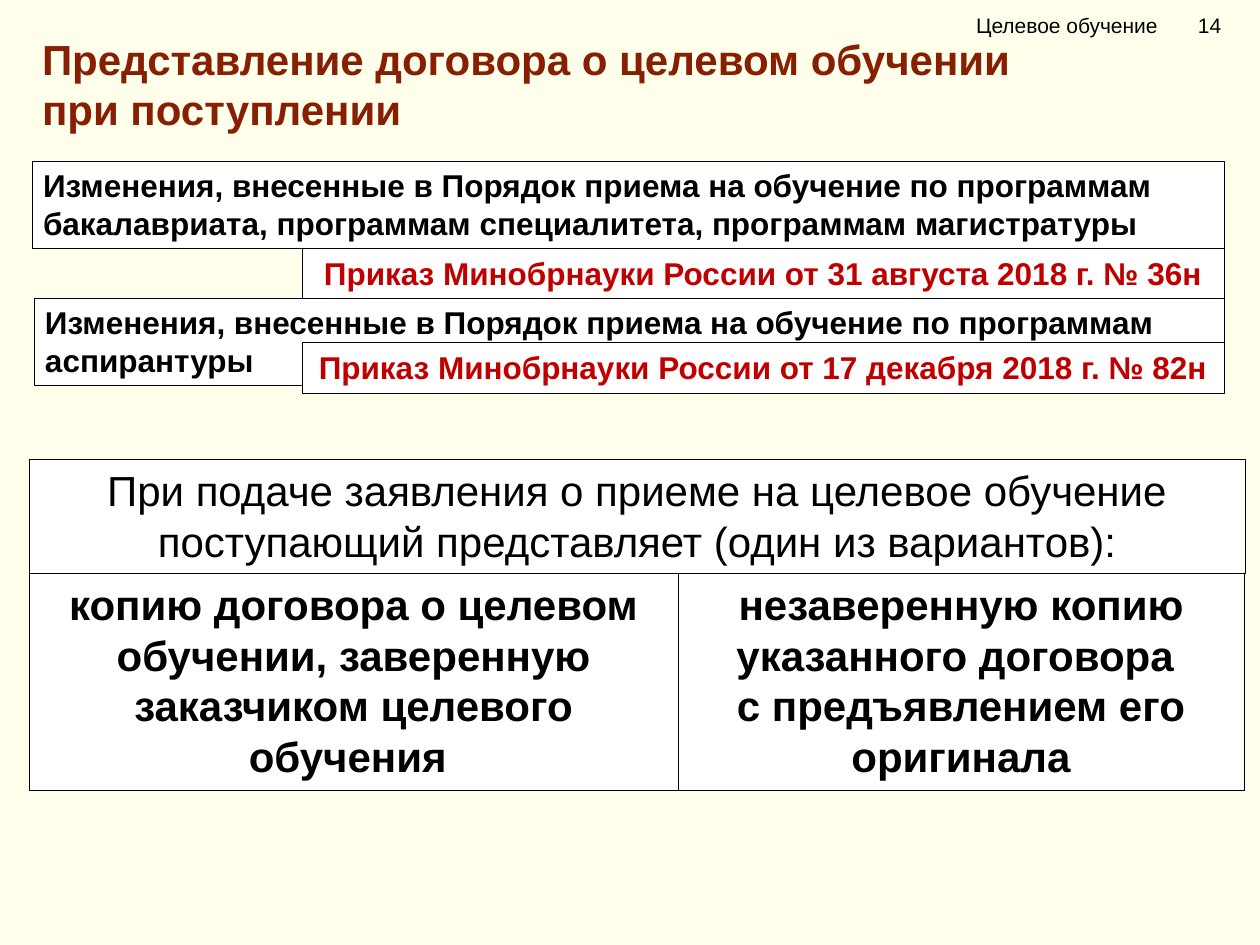
from dataclasses import dataclass

from lxml import etree
from pptx import Presentation
from pptx.dml.color import RGBColor
from pptx.enum.shapes import MSO_SHAPE
from pptx.enum.text import MSO_ANCHOR, PP_ALIGN
from pptx.oxml.ns import qn
from pptx.util import Pt

RECTANGLE = MSO_SHAPE.RECTANGLE
LEFT, CENTER = PP_ALIGN.LEFT, PP_ALIGN.CENTER
TOP, MIDDLE = MSO_ANCHOR.TOP, MSO_ANCHOR.MIDDLE


@dataclass(frozen=True)
class Theme:
    font: str = "Arial"
    background: str = "FFFFEB"
    panel: str = "FFFFFF"
    ink: str = "000000"
    title: str = "871F03"
    order: str = "C00000"
    large: int = 24
    medium: int = 18
    small: int = 12
    outline: float = 0.25


THEME = Theme()
SLIDE_SIZE = (1260, 945)

TITLE = ["Представление договора о целевом обучении", "при поступлении"]
HEADER = ["Целевое обучение\t14"]

# Regulation changes: text, box
CHANGES = [
    ("Изменения, внесенные в Порядок приема на обучение по программам "
     "бакалавриата, программам специалитета, программам магистратуры",
     (32, 161, 1192, 87)),
    ("Изменения, внесенные в Порядок приема на обучение по программам аспирантуры",
     (34, 298, 1190, 87)),
]
# Ministry orders: text, top
ORDERS = [
    ("Приказ Минобрнауки России от 31 августа 2018 г. № 36н", 248),
    ("Приказ Минобрнауки России от 17 декабря 2018 г. № 82н", 342),
]
ORDER_LEFT, ORDER_WIDTH, ORDER_HEIGHT = 302, 922, 51

REQUIREMENT = ["При подаче заявления о приеме на целевое обучение "
               "поступающий представляет (один из вариантов):"]
REQUIREMENT_BOX = (29, 459, 1216, 114)
# Options side by side under the requirement: paragraphs, width
OPTIONS = [
    (["копию договора о целевом обучении, заверенную заказчиком целевого обучения "], 649),
    (["незаверенную копию указанного договора ", "с предъявлением его оригинала"], 566),
]
OPTION_HEIGHT = 217


def px(value):
    return round(value * 914400 / 126)


def color(value):
    return RGBColor.from_string(value)


def write(shape, paragraphs, size, ink=THEME.ink, bold=False, align=LEFT,
          anchor=TOP, insets=(13, 6)):
    frame = shape.text_frame
    frame.word_wrap = True
    frame.vertical_anchor = anchor
    frame.margin_left = frame.margin_right = px(insets[0])
    frame.margin_top = frame.margin_bottom = px(insets[1])
    frame.text = "\n".join(paragraphs)
    for paragraph in frame.paragraphs:
        paragraph.alignment = align
        paragraph.line_spacing = 1.0
        paragraph.space_before = Pt(0)
        font = paragraph.font
        font.name, font.size, font.bold = THEME.font, Pt(size), bold
        font.color.rgb = color(ink)


def add_panel(slide, box, paragraphs, size, **style):
    """Add a white outlined rectangle holding text."""
    panel = slide.shapes.add_shape(RECTANGLE, *map(px, box))
    panel.shadow.inherit = False
    panel.fill.solid()
    panel.fill.fore_color.rgb = color(THEME.panel)
    panel.line.color.rgb = color(THEME.ink)
    panel.line.width = Pt(THEME.outline)
    write(panel, paragraphs, size, **style)


def add_tab_stop(paragraph, position):
    properties = paragraph._p.get_or_add_pPr()
    stops = etree.Element(qn("a:tabLst"))
    etree.SubElement(stops, qn("a:tab"), pos=str(px(position)), algn="l")
    default_font = properties.find(qn("a:defRPr"))
    default_font.addprevious(stops)


def add_heading(slide):
    title = slide.shapes.title
    title.left, title.top, title.width, title.height = map(px, (29, 27, 1186, 114))
    write(title, TITLE, THEME.large, THEME.title, bold=True)

    header = slide.shapes.add_textbox(*map(px, (937, 0, 323, 51)))
    write(header, HEADER, THEME.small, anchor=MIDDLE)
    header.text_frame.margin_left = px(39)
    add_tab_stop(header.text_frame.paragraphs[0], 222)


def add_requirement(slide):
    add_panel(slide, REQUIREMENT_BOX, REQUIREMENT, THEME.large, align=CENTER)
    left, top, _, height = REQUIREMENT_BOX
    for paragraphs, width in OPTIONS:
        add_panel(slide, (left, top + height, width, OPTION_HEIGHT), paragraphs,
                  THEME.large, bold=True, align=CENTER)
        left += width


def add_regulations(slide):
    for (change, box), (order, top) in zip(CHANGES, ORDERS):
        add_panel(slide, box, [change], THEME.medium, bold=True, insets=(11, 5))
        add_panel(slide, (ORDER_LEFT, top, ORDER_WIDTH, ORDER_HEIGHT), [order],
                  THEME.medium, ink=THEME.order, bold=True, align=CENTER)


def main():
    presentation = Presentation()
    presentation.slide_width, presentation.slide_height = map(px, SLIDE_SIZE)
    slide = presentation.slides.add_slide(presentation.slide_layouts[5])
    slide.background.fill.solid()
    slide.background.fill.fore_color.rgb = color(THEME.background)
    add_heading(slide)
    add_requirement(slide)
    add_regulations(slide)
    presentation.save("out.pptx")


if __name__ == "__main__":
    main()
